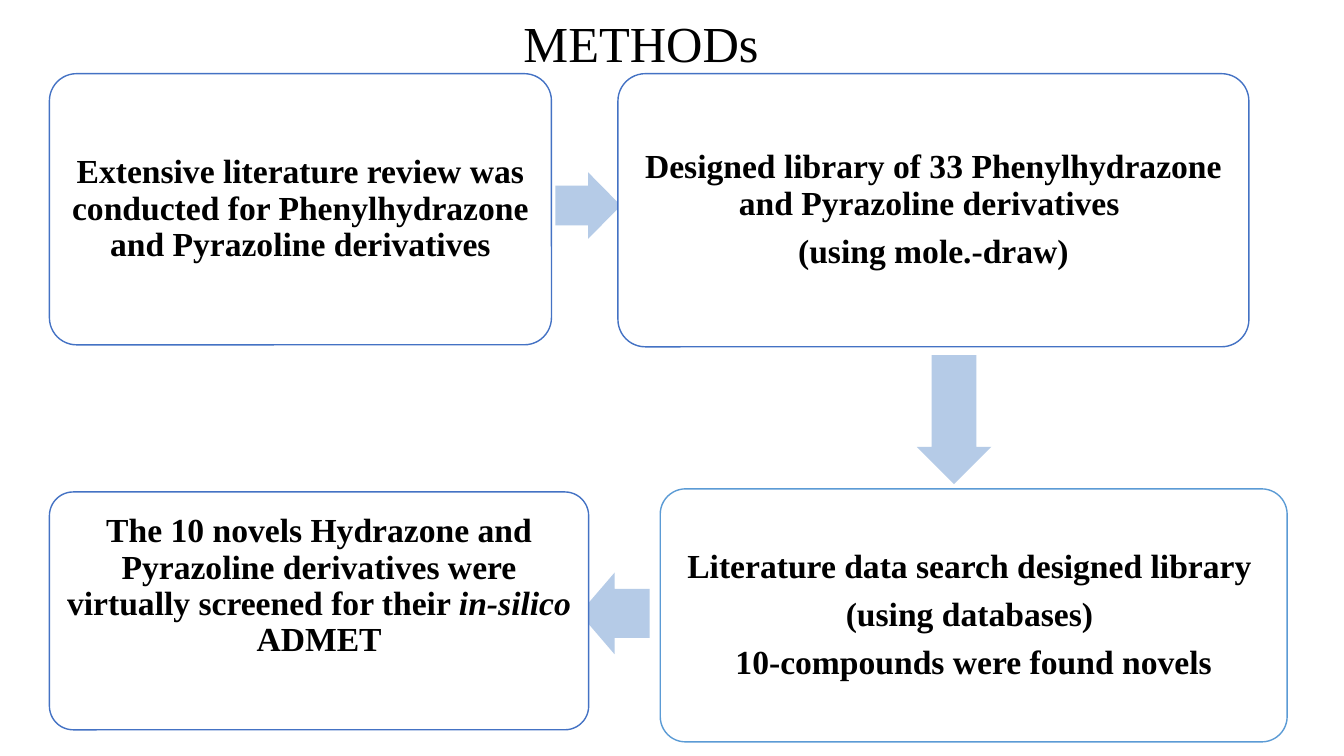
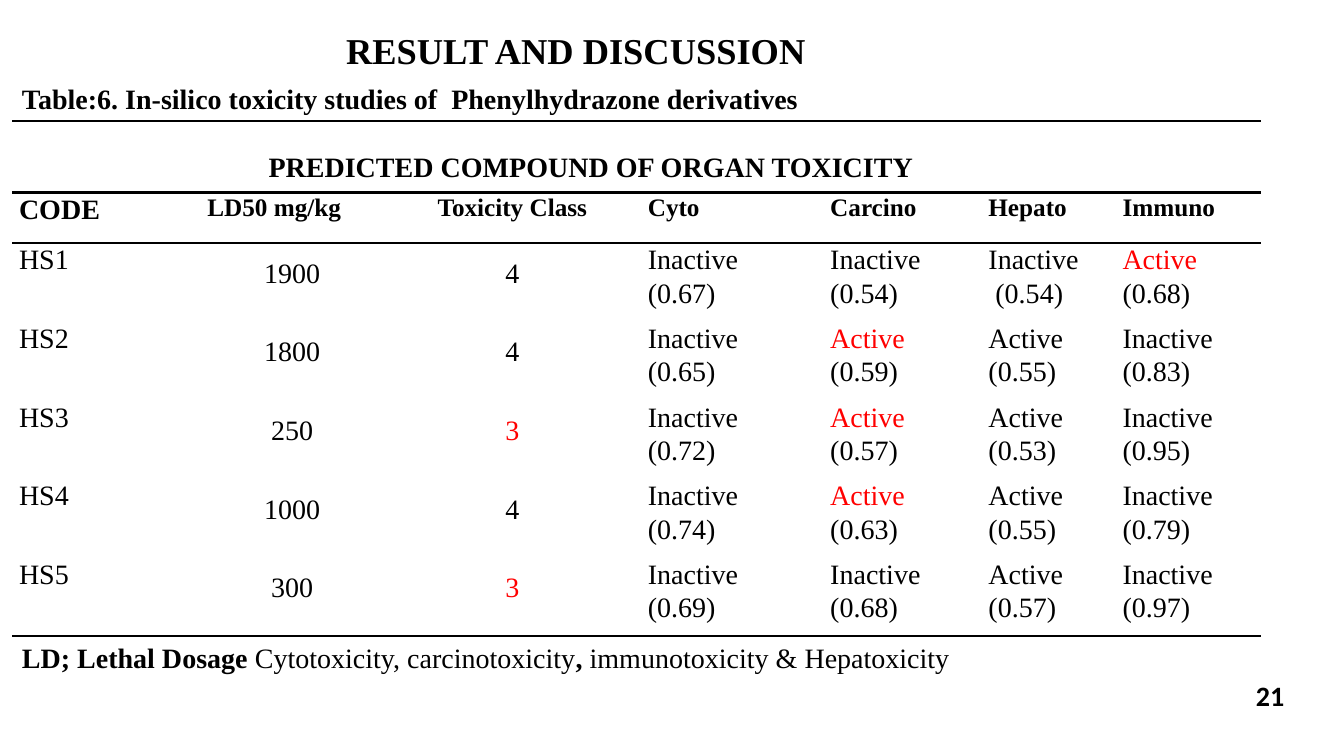
"""Build the methods flow and the toxicity table as two slides."""
from dataclasses import dataclass
from typing import Any, Optional

import lxml.etree
import pptx
import pptx.dml.color
import pptx.enum.shapes
import pptx.enum.text
import pptx.oxml.ns
import pptx.util

Pt = pptx.util.Pt
Align = pptx.enum.text.PP_ALIGN
Anchor = pptx.enum.text.MSO_ANCHOR
Kind = pptx.enum.shapes.MSO_SHAPE
Place = tuple[float, float, float, float]


@dataclass(frozen=True)
class Theme:
    ink: str = "000000"
    paper: str = "FFFFFF"
    alert: str = "FF0000"
    blue: str = "4472C4"
    sky: str = "5B9BD5"
    pale: str = "B5CBE7"
    serif: str = "Times New Roman"
    sans: str = "Calibri"
    title: int = 36
    head: int = 26
    step: int = 24
    body: int = 20
    label: int = 18


THEME = Theme()


@dataclass(frozen=True)
class Run:
    text: str
    size: int = THEME.body
    bold: bool = True
    slant: bool = False
    tint: str = THEME.ink
    font: str = THEME.serif


@dataclass(frozen=True)
class Para:
    runs: tuple[Run, ...]
    align: Any = Align.LEFT
    lead: float = 1.0
    after: float = 0


@dataclass(frozen=True)
class Box:
    place: Place
    paras: tuple[Para, ...]
    edge: str = THEME.blue
    foot: float = 7


@dataclass(frozen=True)
class Arrow:
    place: Place
    kind: Any


@dataclass(frozen=True)
class Note:
    place: Place
    para: Para
    anchor: Any = Anchor.TOP


def step(*runs: Run) -> Para:
    """Make one centred paragraph of a flow box."""
    return Para(runs, Align.CENTER, 0.9, 8.4)


def bold(text: str, slant: bool = False) -> Run:
    """Make a bold run at the flow size."""
    return Run(text, THEME.step, slant=slant)


FLOW: tuple[Box | Arrow, ...] = (
    Box((35.3, 52.6, 358.6, 193.7), (
        step(bold("Extensive literature review was conducted for "
                  "Phenylhydrazone and Pyrazoline derivatives")),)),
    Arrow((396.7, 123.1, 46.8, 47.5), Kind.RIGHT_ARROW),
    Box((441.4, 52.6, 450.7, 195.1), (
        step(bold("Designed library of 33 Phenylhydrazone and Pyrazoline derivatives ")),
        step(bold("(using mole.-draw)")))),
    Arrow((654.9, 253.6, 53.3, 92.2), Kind.DOWN_ARROW),
    Box((471.6, 349.2, 447.8, 180.7), (
        step(bold("Literature data search designed library ")),
        step(bold("(using databases) ")),
        step(bold("10-compounds were found novels"))), THEME.sky),
    Arrow((414, 409, 50, 58.3), Kind.LEFT_ARROW),
    Box((35.3, 351.4, 385.2, 169.9), (
        step(bold("The 10 novels Hydrazone and Pyrazoline derivatives were "
                  "virtually screened for their "),
             bold("in-silico", True), bold(" ADMET")),), foot=42),
)
TITLE = Note((237.6, 13.7, 440.6, 38.9),
             Para((Run("METHODs", THEME.title, False),), Align.CENTER, 0.9), Anchor.MIDDLE)
NOTES = (
    Note((875.5, 483.8, 49, 26),
         Para((Run("21", font=THEME.sans),), Align.RIGHT), Anchor.MIDDLE),
    Note((8.6, 54.7, 573, 31.7),
         Para((Run("Table:6. In-silico toxicity studies of  Phenylhydrazone derivatives"),))),
    Note((223.9, 16.6, 375, 38.9),
         Para((Run("RESULT AND DISCUSSION", THEME.head),), Align.CENTER)),
    Note((8.6, 454.3, 866.9, 31.7),
         Para((Run("LD; Lethal Dosage "),
               Run("Cytotoxicity, carcinotoxicity", bold=False), Run(", "),
               Run("immunotoxicity & Hepatoxicity", bold=False)))),
)
WIDTHS = (134.6, 131, 183.6, 130.3, 113, 95.8, 103.7)
HEIGHTS = (51, 36) + (56.2,) * 5
BANNER = "PREDICTED COMPOUND OF ORGAN TOXICITY"
HEADS = ("CODE", "LD50 mg/kg", "Toxicity Class", "Cyto", "Carcino", "Hepato", "Immuno")
ROWS = (
    ("HS1", "1900", "4", "Inactive\n(0.67)", "Inactive\n(0.54)", "Inactive\n (0.54)",
     "Active\n(0.68)"),
    ("HS2", "1800", "4", "Inactive\n(0.65)", "Active\n(0.59)", "Active\n(0.55)",
     "Inactive\n(0.83)"),
    ("HS3", "250", "3", "Inactive\n(0.72)", "Active\n(0.57)", "Active\n(0.53)",
     "Inactive\n(0.95)"),
    ("HS4", "1000", "4", "Inactive\n(0.74)", "Active\n(0.63)", "Active\n(0.55)",
     "Inactive\n(0.79)"),
    ("HS5", "300", "3", "Inactive\n(0.69)", "Inactive\n(0.68)", "Active\n(0.57)",
     "Inactive\n(0.97)"),
)
RED = {(0, 6), (1, 4), (2, 2), (2, 4), (3, 4), (4, 2)}
PLAIN = "{2D5ABB26-0587-4C30-8999-92F81FD0307C}"


def shade(code: str) -> Any:
    """Turn a hex code into a colour."""
    return pptx.dml.color.RGBColor.from_string(code)


def points(place: Place) -> list[Any]:
    """Turn a place into lengths."""
    return [Pt(part) for part in place]


def write(frame: Any, paras: tuple[Para, ...]) -> None:
    """Fill a text frame run by run."""
    for index, para in enumerate(paras):
        line = frame.paragraphs[0] if index == 0 else frame.add_paragraph()
        line.alignment = para.align
        line.line_spacing = para.lead
        line.space_after = Pt(para.after)
        for part in para.runs:
            run = line.add_run()
            run.text = part.text
            font = run.font
            font.name, font.size = part.font, Pt(part.size)
            font.bold, font.italic = part.bold, part.slant
            font.color.rgb = shade(part.tint)


def add_note(slide: Any, note: Note) -> None:
    """Add a text box."""
    frame = slide.shapes.add_textbox(*points(note.place)).text_frame
    frame.word_wrap = True
    frame.vertical_anchor = note.anchor
    write(frame, (note.para,))


def add_form(slide: Any, kind: Any, place: Place, fill: str, edge: Optional[str]) -> Any:
    """Add a flat preset shape."""
    shape = slide.shapes.add_shape(kind, *points(place))
    shape.shadow.inherit = False
    shape.fill.solid()
    shape.fill.fore_color.rgb = shade(fill)
    if edge:
        shape.line.color.rgb = shade(edge)
        shape.line.width = Pt(1)
    else:
        shape.line.fill.background()
    return shape


def add_box(slide: Any, box: Box) -> None:
    """Add a rounded flow box with its text."""
    shape = add_form(slide, Kind.ROUNDED_RECTANGLE, box.place, THEME.paper, box.edge)
    shape.adjustments[0] = 0.1
    frame = shape.text_frame
    frame.word_wrap = True
    frame.vertical_anchor = Anchor.MIDDLE
    frame.margin_left = frame.margin_right = frame.margin_top = Pt(7)
    frame.margin_bottom = Pt(box.foot)
    write(frame, box.paras)


def add_arrow(slide: Any, arrow: Arrow) -> None:
    """Add a block arrow."""
    shape = add_form(slide, arrow.kind, arrow.place, THEME.pale, None)
    shape.adjustments[0] = 0.6
    shape.adjustments[1] = 0.5


def rule(cell: Any, side: str) -> None:
    """Draw one border of a cell."""
    name = pptx.oxml.ns.qn
    line = lxml.etree.SubElement(cell._tc.get_or_add_tcPr(), name("a:ln" + side),
                                 w=str(Pt(2)))
    fill = lxml.etree.SubElement(line, name("a:solidFill"))
    lxml.etree.SubElement(fill, name("a:srgbClr"), val=THEME.ink)


def fill_cell(row: int, col: int) -> tuple[Para, ...]:
    """Work out the text of a table cell."""
    if row == 0:
        return (Para((Run(BANNER),), Align.CENTER, 2),) if col == 1 else ()
    if row == 1:
        size = THEME.label if col else THEME.body
        align = {0: Align.JUSTIFY, 2: Align.CENTER}.get(col, Align.LEFT)
        return (Para((Run(HEADS[col], size),), align, 1.07),)
    mid = col in (1, 2)
    align, lead = (Align.CENTER, 1.5) if mid else (Align.LEFT, 1.07)
    red = (row - 2, col) in RED
    return tuple(
        Para((Run(text, bold=False,
                  tint=THEME.alert if red and index == 0 else THEME.ink),), align, lead)
        for index, text in enumerate(ROWS[row - 2][col].split("\n")))


def add_grid(slide: Any) -> None:
    """Add the toxicity table."""
    place = (8.6, 86.4, sum(WIDTHS), sum(HEIGHTS))
    grid = slide.shapes.add_table(len(HEIGHTS), len(WIDTHS), *points(place)).table
    grid.first_row = grid.horz_banding = False
    grid._tbl.tblPr.find(pptx.oxml.ns.qn("a:tableStyleId")).text = PLAIN
    for col, width in enumerate(WIDTHS):
        grid.columns[col].width = Pt(width)
    last = len(HEIGHTS) - 1
    for row, height in enumerate(HEIGHTS):
        grid.rows[row].height = Pt(height)
        for col in range(len(WIDTHS)):
            cell = grid.cell(row, col)
            cell.margin_left = cell.margin_right = Pt(5)
            cell.margin_top = cell.margin_bottom = Pt(0)
            if row in (0, 1):
                rule(cell, "T")
            if row in (0, last):
                rule(cell, "B")
            cell.fill.background()
            write(cell.text_frame, fill_cell(row, col))
    grid.cell(0, 1).merge(grid.cell(0, 4))


def main() -> None:
    """Build and save the deck."""
    deck = pptx.Presentation()
    deck.slide_width, deck.slide_height = Pt(960), Pt(540)
    blank = deck.slide_layouts[6]
    flow = deck.slides.add_slide(blank)
    add_note(flow, TITLE)
    for item in FLOW:
        if isinstance(item, Box):
            add_box(flow, item)
        else:
            add_arrow(flow, item)
    result = deck.slides.add_slide(blank)
    add_grid(result)
    for note in NOTES:
        add_note(result, note)
    deck.save("out.pptx")


if __name__ == "__main__":
    main()
